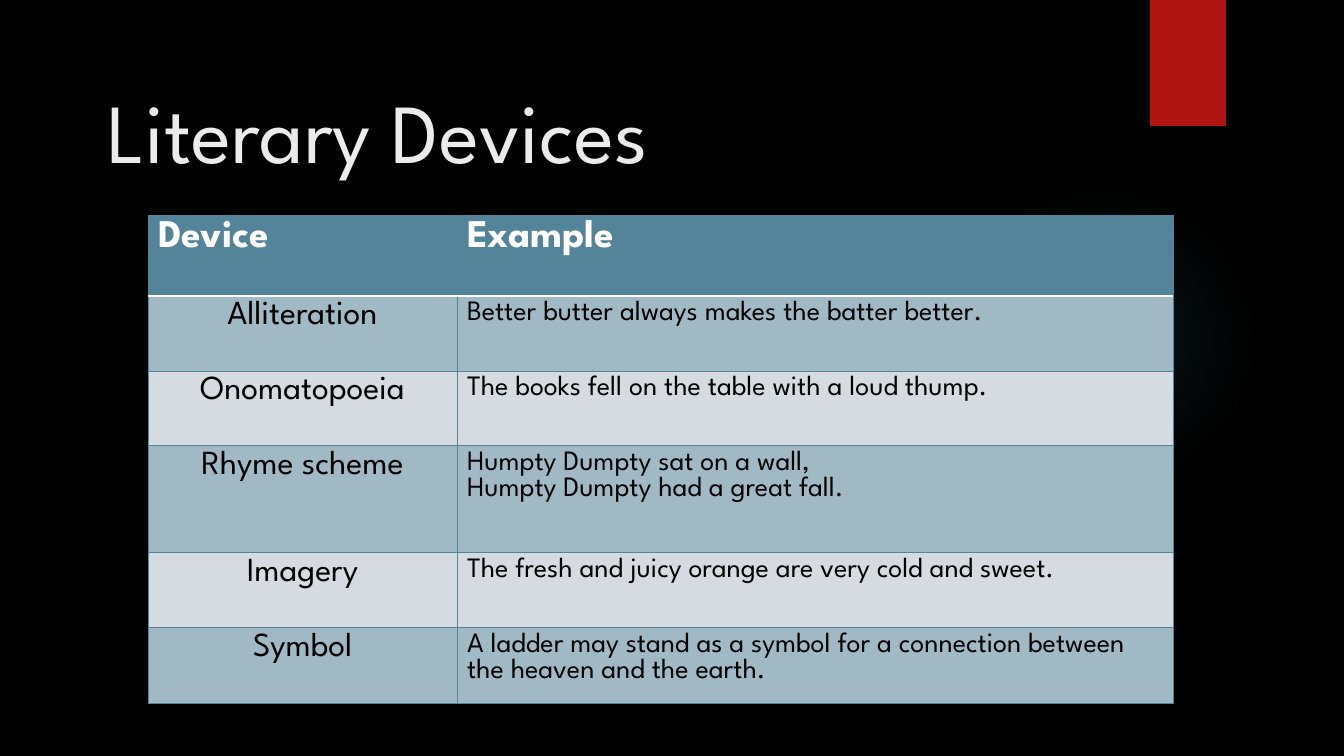
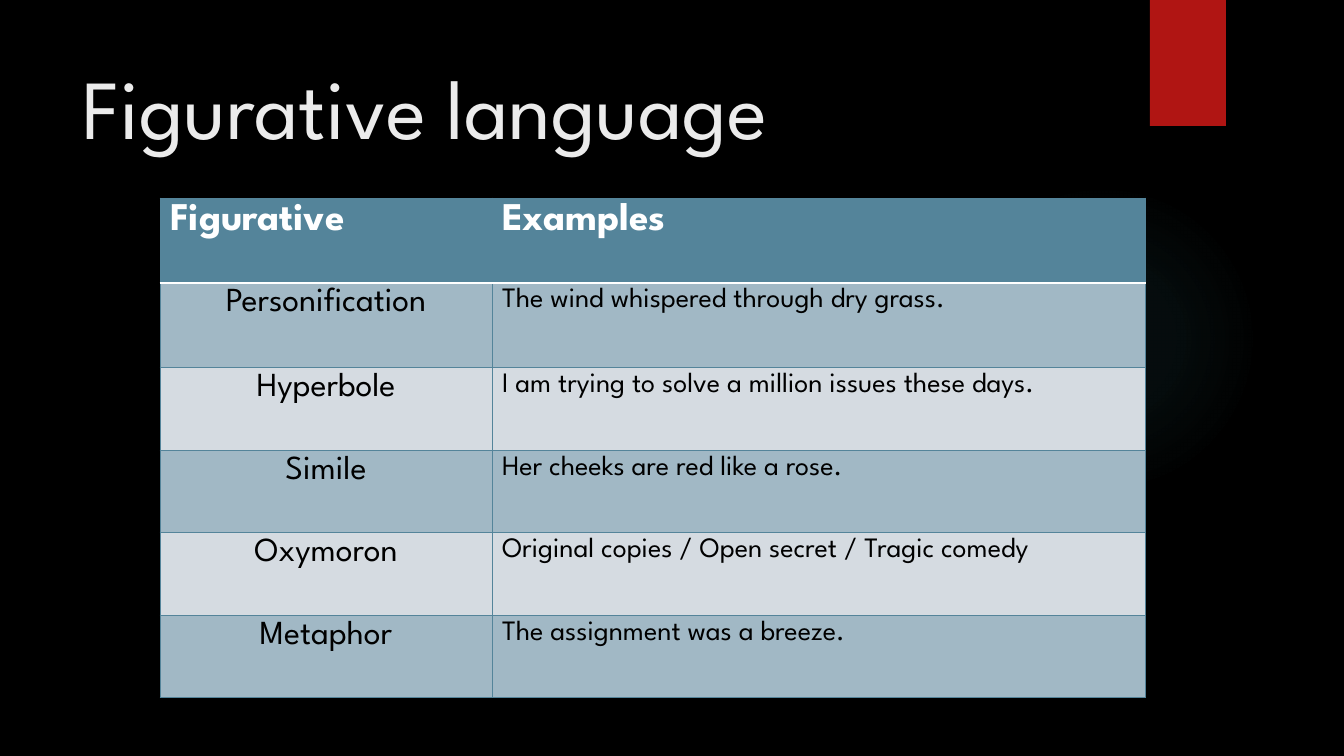
import pptx
import pptx.util
import pptx.dml.color
import pptx.enum.shapes
import pptx.enum.text
import pptx.oxml
import pptx.oxml.ns

RGB = pptx.dml.color.RGBColor
BLACK = RGB(0x00, 0x00, 0x00)
WHITE = RGB(0xFF, 0xFF, 0xFF)
PALE = RGB(0xEB, 0xEB, 0xEB)
RED = RGB(0xB0, 0x15, 0x13)
TEAL = RGB(0x54, 0x84, 0x9A)
MIST = RGB(0xA1, 0xB8, 0xC5)
CLOUD = RGB(0xD5, 0xDB, 0xE1)
GLOW = RGB(0x50, 0xB9, 0xC1)

FACE = "League Spartan"
SCALE = 12192000 / 1344
SHAPE = pptx.enum.shapes.MSO_SHAPE
ALIGN = pptx.enum.text.PP_ALIGN
NS = pptx.oxml.ns.nsdecls("a")

# Glow stops: position and opacity in percent
STOPS = [(0, 7), (36, 6), (69, 0)]

PAGES = [
    {
        "title": "Literary Devices",
        "head": (97, 74, 1036, 123),
        "place": (148, 215),
        "cols": [309, 716],
        "rows": [81, 75, 75, 107, 75, 76],
        "cells": [
            ("Device", "Example"),
            ("Alliteration", "Better butter always makes the batter better."),
            ("Onomatopoeia", "The books fell on the table with a loud thump."),
            ("Rhyme scheme", "Humpty Dumpty sat on a wall,\nHumpty Dumpty had a great fall."),
            ("Imagery", "The fresh and juicy orange are very cold and sweet."),
            ("Symbol", "A ladder may stand as a symbol for a connection between the heaven and the earth."),
        ],
    },
    {
        "title": "Figurative language",
        "head": (72, 50, 1036, 149),
        "place": (160, 198),
        "cols": [332, 654],
        "rows": [85, 85, 83, 82, 83, 82],
        "cells": [
            ("Figurative", "Examples"),
            ("Personification", "The wind whispered through dry grass."),
            ("Hyperbole", "I am trying to solve a million issues these days."),
            ("Simile", "Her cheeks are red like a rose."),
            ("Oxymoron", "Original copies / Open secret / Tragic comedy"),
            ("Metaphor", "The assignment was a breeze."),
        ],
    },
]


def px(*sizes):
    """Turn pixel lengths into a list of EMU."""
    return [pptx.util.Emu(round(size * SCALE)) for size in sizes]


def style(frame, size, color, bold=False, align=ALIGN.LEFT):
    for para in frame.paragraphs:
        para.alignment = align
        for run in para.runs:
            run.font.name = FACE
            run.font.size = pptx.util.Pt(size)
            run.font.bold = bold
            run.font.color.rgb = color


prs = pptx.Presentation()
prs.slide_width, prs.slide_height = px(1344, 756)
back = prs.slide_master.background.fill
back.solid()
back.fore_color.rgb = BLACK

for page in PAGES:
    slide = prs.slides.add_slide(prs.slide_layouts[5])

    glow = slide.shapes.add_shape(SHAPE.OVAL, *px(948, 184, 310, 310))
    flag = slide.shapes.add_shape(SHAPE.RECTANGLE, *px(1150, 0, 76, 126))
    for shape in (glow, flag):
        shape.shadow.inherit = False
        shape.line.fill.background()
    flag.fill.solid()
    flag.fill.fore_color.rgb = RED
    stops = "".join(
        f'<a:gs pos="{pos * 1000}"><a:srgbClr val="{GLOW}">'
        f'<a:alpha val="{alpha * 1000}"/></a:srgbClr></a:gs>'
        for pos, alpha in STOPS
    )
    grad = pptx.oxml.parse_xml(
        f'<a:gradFill {NS}><a:gsLst>{stops}</a:gsLst><a:path path="circle">'
        '<a:fillToRect l="50000" t="50000" r="50000" b="50000"/></a:path></a:gradFill>'
    )
    glow.element.spPr.find(pptx.oxml.ns.qn("a:prstGeom")).addnext(grad)

    title = slide.shapes.title
    title.left, title.top, title.width, title.height = px(*page["head"])
    frame = title.text_frame
    frame.text = page["title"]
    frame.word_wrap = True
    frame.auto_size = pptx.enum.text.MSO_AUTO_SIZE.NONE
    frame.vertical_anchor = pptx.enum.text.MSO_ANCHOR.TOP
    style(frame, 60, PALE)

    cols, rows = page["cols"], page["rows"]
    place = px(*page["place"], sum(cols), sum(rows))
    table = slide.shapes.add_table(len(rows), len(cols), *place).table
    for col, width in zip(table.columns, px(*cols)):
        col.width = width
    for row, height in zip(table.rows, px(*rows)):
        row.height = height

    for r, texts in enumerate(page["cells"]):
        for c, text in enumerate(texts):
            cell = table.cell(r, c)
            cell.text_frame.text = text
            cell.fill.solid()
            if r == 0:
                cell.fill.fore_color.rgb = TEAL
                style(cell.text_frame, 28, WHITE, bold=True)
            else:
                cell.fill.fore_color.rgb = MIST if r % 2 else CLOUD
                if c == 0:
                    style(cell.text_frame, 24, BLACK, align=ALIGN.CENTER)
                else:
                    style(cell.text_frame, 20, BLACK)

            props = cell._tc.get_or_add_tcPr()
            for i, side in enumerate("LRTB"):
                rule = (r, side) in ((0, "B"), (1, "T"))
                color, width = (WHITE, 1.5) if rule else (TEAL, 0.75)
                line = pptx.oxml.parse_xml(
                    f'<a:ln{side} {NS} w="{pptx.util.Pt(width)}"><a:solidFill>'
                    f'<a:srgbClr val="{color}"/></a:solidFill></a:ln{side}>'
                )
                props.insert(i, line)

prs.save("out.pptx")
